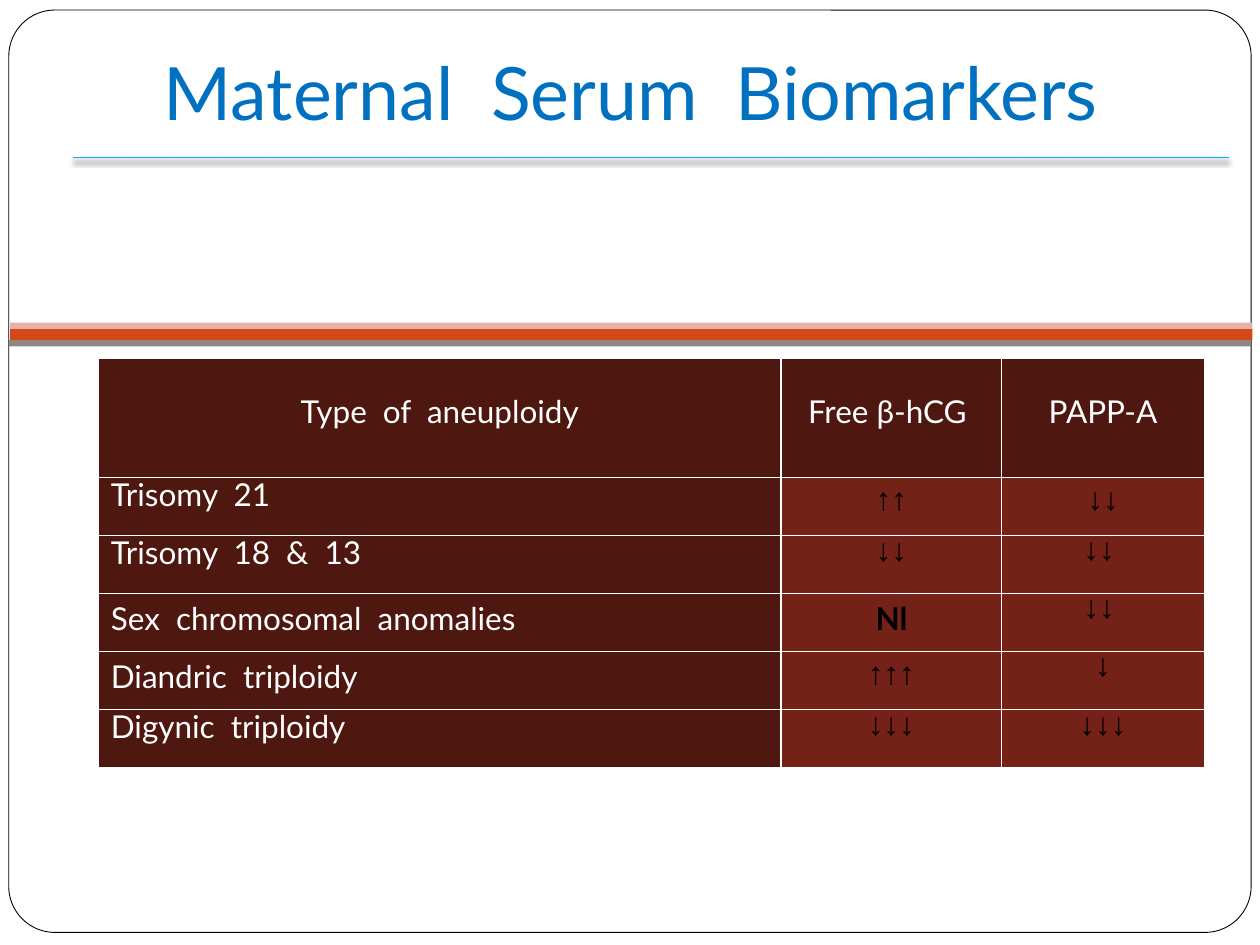
from lxml import etree
from pptx import Presentation
from pptx.dml.color import RGBColor
from pptx.enum.shapes import MSO_CONNECTOR, MSO_SHAPE
from pptx.enum.text import MSO_ANCHOR, PP_ALIGN
from pptx.oxml import parse_xml
from pptx.oxml.ns import nsdecls, qn
from pptx.util import Inches, Pt

LEFT, CENTER = PP_ALIGN.LEFT, PP_ALIGN.CENTER
BOTTOM = MSO_ANCHOR.BOTTOM
ROUNDED, RECTANGLE = MSO_SHAPE.ROUNDED_RECTANGLE, MSO_SHAPE.RECTANGLE
STRAIGHT = MSO_CONNECTOR.STRAIGHT

SANS, SERIF = "Lato", "Times New Roman"
WHITE, BLACK, DARK, MEDIUM = "FFFFFF", "000000", "4E1710", "742217"

TITLE = "Maternal  Serum  Biomarkers"
BANDS = [
    (0.08, 2.6, 0.1, "D34817"),
    (0.08, 2.56, 0.05, "E6B1AC"),
    (0.07, 2.7, 0.05, "918485"),
]
HEADERS = ["Type  of  aneuploidy", "Free β-hCG ", "PAPP-A"]
ROWS = [
    [("Trisomy  21", 0.95), ("↑↑", 1.15), ("↓↓", 1.15)],
    [("Trisomy  18  &  13", 0.95), ("↓↓", 0.95), ("↓↓ ", 0.91)],
    [("Sex  chromosomal  anomalies", 1.15), ("Nl", 1.15), ("↓↓ ", 0.91)],
    [("Diandric  triploidy", 1.15), ("↑↑↑", 1.15), ("↓", 0.91)],
    [("Digynic  triploidy", 0.95), ("↓↓↓", 0.95), ("↓↓↓", 0.95)],
]
COLUMN_WIDTHS = [5.42, 1.75, 1.61]
HEADER_HEIGHT, ROW_HEIGHT = 0.95, 0.46


def color(value):
    return RGBColor.from_string(value)


def write(frame, text, size=18, font=SANS, fill=WHITE, bold=False, align=CENTER, spacing=1.0):
    para = frame.paragraphs[0]
    para.alignment = align
    para.line_spacing = spacing
    span = para.add_run()
    span.text = text
    span.font.size = Pt(size)
    span.font.name = font
    span.font.bold = bold
    span.font.color.rgb = color(fill)


def add_block(page, kind, left, top, width, height, fill):
    block = page.shapes.add_shape(kind, Inches(left), Inches(top), Inches(width), Inches(height))
    block.shadow.inherit = False
    block.fill.solid()
    block.fill.fore_color.rgb = color(fill)
    block.line.fill.background()
    return block


def add_title_rule(page):
    rule = page.shapes.add_connector(STRAIGHT, Inches(0.58), Inches(1.25), Inches(9.75), Inches(1.25))
    rule.line.color.rgb = color("00B0F0")
    rule.line.width = Pt(1)
    effects = etree.SubElement(rule._element.spPr, qn("a:effectLst"))
    shadow = etree.SubElement(effects, qn("a:outerShdw"), blurRad=str(Pt(3)), dist=str(Pt(2)),
                              dir="5400000", rotWithShape="0")
    tint = etree.SubElement(shadow, qn("a:srgbClr"), val=BLACK)
    etree.SubElement(tint, qn("a:alpha"), val="50000")


def style_cell(cell, fill, left=0, top=0):
    cell.margin_left, cell.margin_top = Inches(left), Inches(top)
    cell.margin_right = cell.margin_bottom = 0
    cell.fill.solid()
    cell.fill.fore_color.rgb = color(fill)
    properties = cell._tc.get_or_add_tcPr()
    for position, side in enumerate(("lnL", "lnR", "lnT", "lnB")):
        properties.insert(position, parse_xml(
            f'<a:{side} {nsdecls("a")} w="{Pt(1)}"><a:solidFill>'
            f'<a:srgbClr val="{WHITE}"/></a:solidFill></a:{side}>'))


def add_biomarker_table(page):
    height = HEADER_HEIGHT + ROW_HEIGHT * len(ROWS)
    table = page.shapes.add_table(len(ROWS) + 1, len(HEADERS), Inches(0.78), Inches(2.84),
                                  Inches(sum(COLUMN_WIDTHS)), Inches(height)).table
    for column, width in zip(table.columns, COLUMN_WIDTHS):
        column.width = Inches(width)
    for index, row in enumerate(table.rows):
        row.height = Inches(ROW_HEIGHT if index else HEADER_HEIGHT)
    for column, text in enumerate(HEADERS):
        cell = table.cell(0, column)
        style_cell(cell, DARK, top=0.23)
        write(cell.text_frame, text, spacing=1.15)
    for index, row in enumerate(ROWS, 1):
        for column, (text, spacing) in enumerate(row):
            cell = table.cell(index, column)
            if column == 0:
                style_cell(cell, DARK, left=0.1)
                write(cell.text_frame, text, align=LEFT, spacing=spacing)
            else:
                style_cell(cell, MEDIUM)
                write(cell.text_frame, text, font=SANS if text == "Nl" else SERIF,
                      fill=BLACK, bold=True, spacing=spacing)


def main():
    deck = Presentation()
    deck.slide_width, deck.slide_height = Inches(10), Inches(7.5)
    page = deck.slides.add_slide(deck.slide_layouts[6])

    border = add_block(page, ROUNDED, 0.07, 0.08, 9.86, 7.32, WHITE)
    border.adjustments[0] = 0.05
    border.line.color.rgb = color(BLACK)
    border.line.width = Pt(0.5)
    for left, top, height, fill in BANDS:
        add_block(page, RECTANGLE, left, top, 9.86, height, fill)
    add_title_rule(page)

    box = page.shapes.add_textbox(Inches(0.42), Inches(-0.32), Inches(9.17), Inches(1.49))
    frame = box.text_frame
    frame.word_wrap = True
    frame.vertical_anchor = BOTTOM
    frame.margin_bottom = Inches(0.1)
    write(frame, TITLE, size=42, fill="0070C0")

    add_biomarker_table(page)
    deck.save("out.pptx")


if __name__ == "__main__":
    main()
